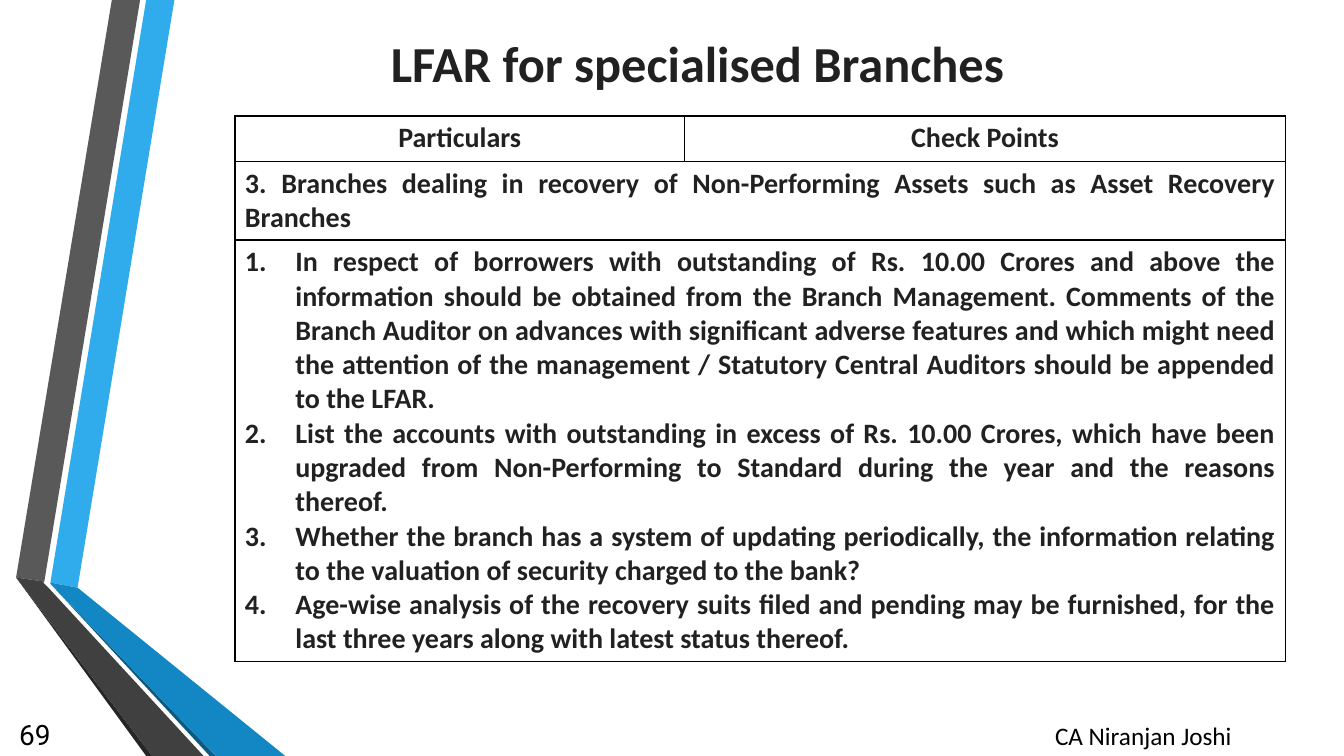
from dataclasses import dataclass

import pptx
import pptx.dml.color
import pptx.enum.text
import pptx.oxml
import pptx.oxml.ns
import pptx.util
from pptx.util import Inches

ALIGN = pptx.enum.text.PP_ALIGN
ANCHOR = pptx.enum.text.MSO_ANCHOR
INK = "212121"
BLACK = "000000"


@dataclass
class Ribbon:
    color: str
    points: list[tuple[float, float]]


@dataclass
class Label:
    text: str
    box: tuple[float, float, float, float]
    size: int
    font: str
    align: ALIGN
    anchor: ANCHOR


RIBBONS = [
    Ribbon("30ACEC", [(0.5, 5.78), (0.77, 5.83), (1.73, 0), (1.45, 0)]),
    Ribbon("595959", [(1.39, 0), (1.11, 0), (0.16, 5.73), (0.44, 5.77)]),
    Ribbon("262626", [(0.16, 5.73), (1.45, 7.5), (1.51, 7.5)]),
    Ribbon("0C5A82", [(0.5, 5.79), (2.08, 7.5), (2.14, 7.5)]),
    Ribbon("1287C3", [(0.5, 5.79), (2.14, 7.5), (2.83, 7.5), (0.77, 5.83), (0.5, 5.78)]),
    Ribbon("404040", [(2.02, 7.5), (0.48, 5.83), (0.43, 5.78), (0.44, 5.77),
                      (0.16, 5.73), (1.51, 7.5)]),
]
LABELS = [
    Label("CA Niranjan Joshi", (9.59, 7.1, 3.5, 0.4), 18, "Calibri", ALIGN.CENTER, ANCHOR.TOP),
    Label("69", (0, 7.08, 0.6, 0.4), 20, "Roboto", ALIGN.RIGHT, ANCHOR.MIDDLE),
]
COLUMN_WIDTHS = [4.46, 5.96]
ROW_HEIGHTS = [0.45, 0.78, 4.18]
HEADINGS = ["Particulars", "Check Points"]
SECTION = ("3. Branches dealing in recovery of Non-Performing Assets "
           "such as Asset Recovery Branches")
CHECK_POINTS = [
    "In respect of borrowers with outstanding of Rs. 10.00 Crores and above the information "
    "should be obtained from the Branch Management. Comments of the Branch Auditor on advances "
    "with significant adverse features and which might need the attention of the management / "
    "Statutory Central Auditors should be appended to the LFAR.",
    "List the accounts with outstanding in excess of Rs. 10.00 Crores, which have been upgraded "
    "from Non-Performing to Standard during the year and the reasons thereof.",
    "Whether the branch has a system of updating periodically, the information relating to the "
    "valuation of security charged to the bank?",
    "Age-wise analysis of the recovery suits filed and pending may be furnished, for the last "
    "three years along with latest status thereof.",
]


def rgb(color: str) -> pptx.dml.color.RGBColor:
    return pptx.dml.color.RGBColor.from_string(color)


def write(frame, *texts: str, size: int = 20, font: str = "Calibri", color: str = INK,
          bold: bool = True, align: ALIGN = ALIGN.CENTER, numbered: bool = False) -> None:
    frame.word_wrap = True
    for index, text in enumerate(texts):
        paragraph = frame.paragraphs[0] if index == 0 else frame.add_paragraph()
        paragraph.alignment = align
        if numbered:
            properties = paragraph._p.get_or_add_pPr()
            properties.set("marL", str(Inches(0.5)))
            properties.set("indent", str(Inches(-0.5)))
            bullet = pptx.oxml.parse_xml(
                f'<a:buAutoNum {pptx.oxml.ns.nsdecls("a")} type="arabicPeriod"/>')
            properties.append(bullet)
        run = paragraph.add_run()
        run.text = text
        run.font.size = pptx.util.Pt(size)
        run.font.name = font
        run.font.bold = bold
        run.font.color.rgb = rgb(color)


def draw_ribbon(slide, ribbon: Ribbon) -> None:
    points = [(Inches(x), Inches(y)) for x, y in ribbon.points]
    builder = slide.shapes.build_freeform(*points[0])
    builder.add_line_segments(points[1:], close=True)
    shape = builder.convert_to_shape()
    shape.shadow.inherit = False
    shape.fill.solid()
    shape.fill.fore_color.rgb = rgb(ribbon.color)
    shape.line.fill.background()


def draw_label(slide, label: Label) -> None:
    shape = slide.shapes.add_textbox(*map(Inches, label.box))
    shape.text_frame.vertical_anchor = label.anchor
    write(shape.text_frame, label.text, size=label.size, font=label.font,
          color=BLACK, bold=False, align=label.align)


def outline_cell(cell) -> None:
    properties = cell._tc.get_or_add_tcPr()
    for side in ("lnL", "lnR", "lnT", "lnB"):
        properties.append(pptx.oxml.parse_xml(
            f'<a:{side} {pptx.oxml.ns.nsdecls("a")} w="{pptx.util.Pt(1)}">'
            f'<a:solidFill><a:srgbClr val="{BLACK}"/></a:solidFill></a:{side}>'))
    cell.fill.background()


def draw_table(slide) -> None:
    table = slide.shapes.add_table(
        len(ROW_HEIGHTS), len(COLUMN_WIDTHS), Inches(2.33), Inches(1.15),
        Inches(sum(COLUMN_WIDTHS)), Inches(sum(ROW_HEIGHTS))).table
    table.first_row = table.horz_banding = False
    for column, width in zip(table.columns, COLUMN_WIDTHS):
        column.width = Inches(width)
    for row, height in zip(table.rows, ROW_HEIGHTS):
        row.height = Inches(height)
    for cell in table.iter_cells():
        outline_cell(cell)
    for index in (1, 2):
        table.cell(index, 0).merge(table.cell(index, 1))
    for index, heading in enumerate(HEADINGS):
        write(table.cell(0, index).text_frame, heading)
    write(table.cell(1, 0).text_frame, SECTION, align=ALIGN.JUSTIFY)
    write(table.cell(2, 0).text_frame, *CHECK_POINTS, align=ALIGN.JUSTIFY, numbered=True)


def main() -> None:
    presentation = pptx.Presentation()
    presentation.slide_width = Inches(13.33)
    presentation.slide_height = Inches(7.5)
    slide = presentation.slides.add_slide(presentation.slide_layouts[5])

    # Folded ribbons on the left
    for ribbon in RIBBONS:
        draw_ribbon(slide, ribbon)

    # Title
    title = slide.shapes.title
    title.left, title.top, title.width, title.height = map(Inches, (2.42, 0.25, 9, 0.74))
    title.text_frame.auto_size = pptx.enum.text.MSO_AUTO_SIZE.NONE
    title.text_frame.vertical_anchor = ANCHOR.MIDDLE
    write(title.text_frame, "LFAR for specialised Branches", size=36)

    # Check point table
    draw_table(slide)

    # Footer and slide number
    for label in LABELS:
        draw_label(slide, label)

    presentation.save("out.pptx")


if __name__ == "__main__":
    main()
